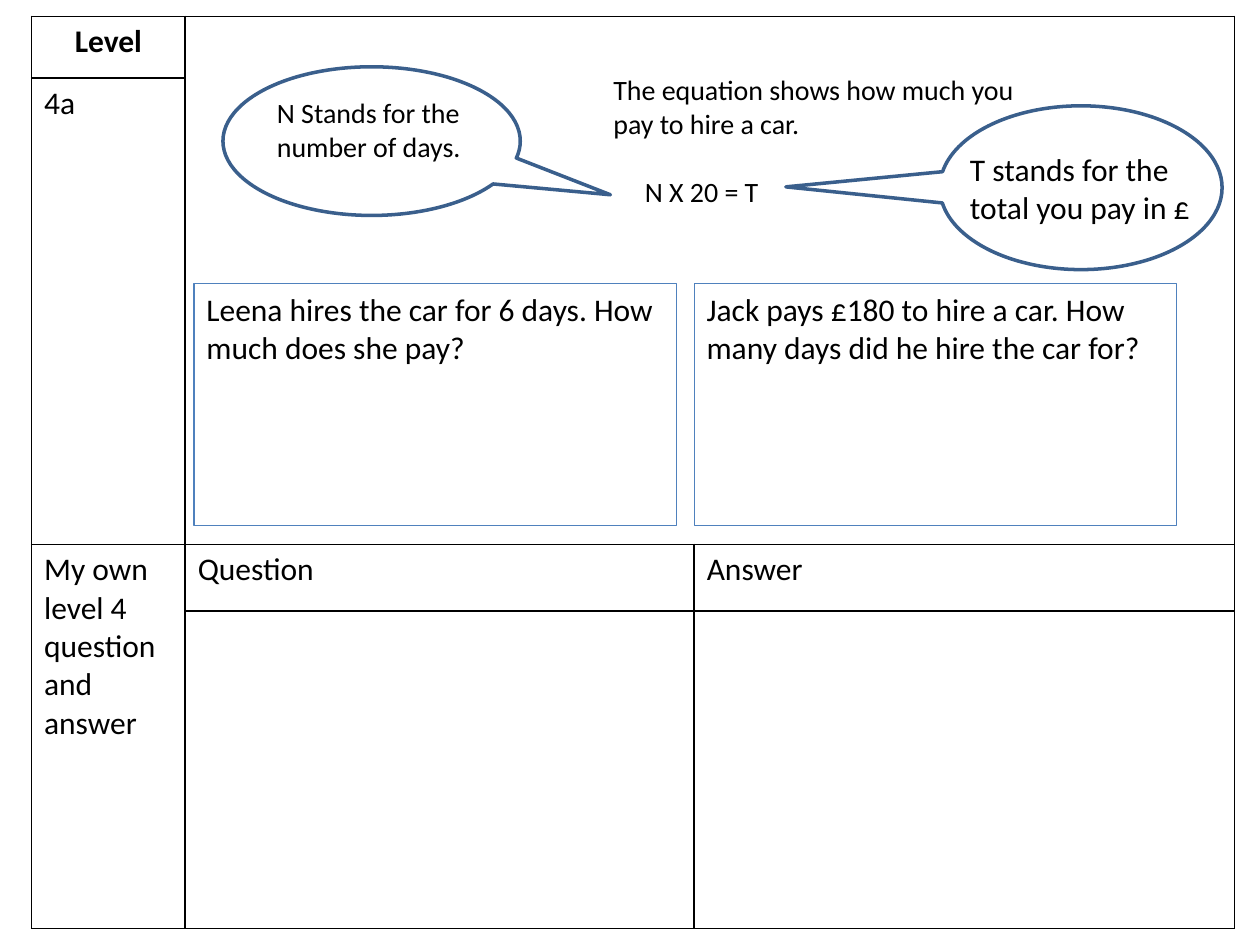
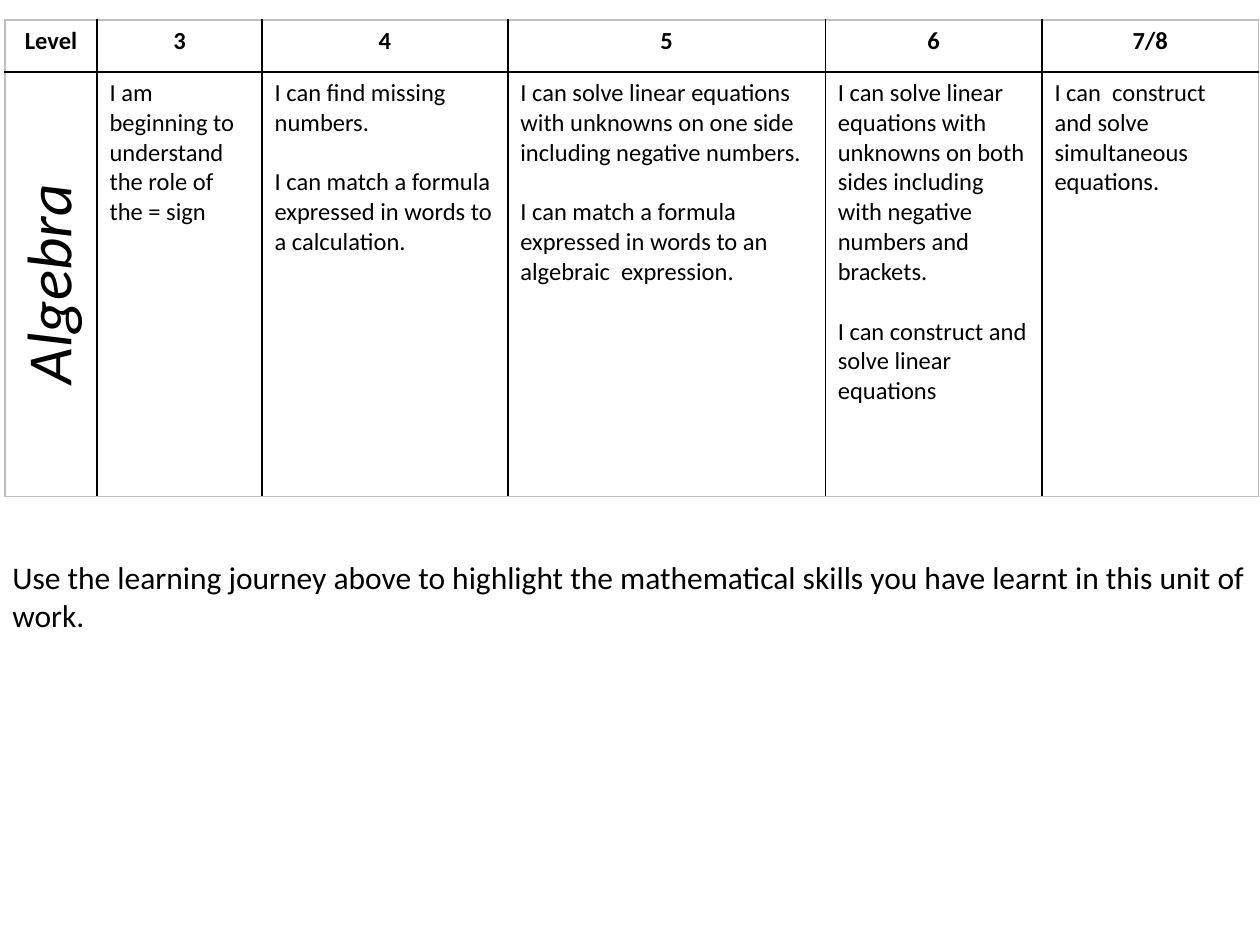
from lxml import etree
from pptx import Presentation
from pptx.dml.color import RGBColor
from pptx.enum.shapes import MSO_SHAPE
from pptx.enum.text import MSO_ANCHOR, PP_ALIGN
from pptx.oxml.ns import qn
from pptx.util import Inches, Pt

BLACK = RGBColor(0x00, 0x00, 0x00)
GREY = RGBColor(0xBF, 0xBF, 0xBF)
OUTLINE_BLUE = RGBColor(0x3A, 0x5F, 0x8C)
BOX_BLUE = RGBColor(0x4F, 0x81, 0xBD)
FONT = "Calibri"
LINE_HEIGHT = 1.22


# Shared text, shape and table helpers
def write_text(frame, paragraphs, size, bold=False, italic=False,
               align=PP_ALIGN.LEFT, gap_before=()):
    """Write paragraphs; those numbered in gap_before get one line of space above."""
    frame.word_wrap = True
    for number, text in enumerate(paragraphs):
        para = frame.paragraphs[0] if number == 0 else frame.add_paragraph()
        para.alignment = align
        if number in gap_before:
            para.space_before = Pt(round(size * LINE_HEIGHT, 1))
        span = para.add_run()
        span.text = text
        span.font.name = FONT
        span.font.size = Pt(size)
        span.font.bold = bold
        span.font.italic = italic
        span.font.color.rgb = BLACK


def add_text(page, box, paragraphs, size, gap_before=()):
    frame = page.shapes.add_textbox(*map(Inches, box)).text_frame
    write_text(frame, paragraphs, size, gap_before=gap_before)
    return frame


def add_outlined_shape(page, kind, box, color, width):
    shape = page.shapes.add_shape(kind, *map(Inches, box))
    shape.shadow.inherit = False
    shape.fill.background()
    shape.line.color.rgb = color
    shape.line.width = Pt(width)
    return shape


def set_borders(cell, colors):
    properties = cell._tc.get_or_add_tcPr()
    for side, color in zip("LRTB", colors):
        line = etree.SubElement(properties, qn(f"a:ln{side}"), w=str(Pt(1)))
        fill = etree.SubElement(line, qn("a:solidFill"))
        etree.SubElement(fill, qn("a:srgbClr"), val=str(color))


def add_grid(page, left, top, widths, heights, edge_color):
    """Add an unfilled table with black inner lines and edge_color outside."""
    rows, columns = len(heights), len(widths)
    table = page.shapes.add_table(
        rows, columns, Inches(left), Inches(top),
        Inches(sum(widths)), Inches(sum(heights))).table
    table.first_row = False
    table.horz_banding = False
    for column, width in zip(table.columns, widths):
        column.width = Inches(width)
    for row, height in zip(table.rows, heights):
        row.height = Inches(height)
    for r in range(rows):
        for c in range(columns):
            on_edge = (c == 0, c == columns - 1, r == 0, r == rows - 1)
            cell = table.cell(r, c)
            set_borders(cell, [edge_color if edge else BLACK for edge in on_edge])
            cell.fill.background()
    return table


# Slide 1: car hire question
def add_worksheet_table(page, left, top):
    table = add_grid(page, left, top, (1.22, 4.04, 4.29),
                     (0.49, 3.7, 0.53, 2.52), BLACK)
    table.cell(0, 1).merge(table.cell(1, 2))
    table.cell(2, 0).merge(table.cell(3, 0))
    write_text(table.cell(0, 0).text_frame, ["Level"], 18, bold=True,
               align=PP_ALIGN.CENTER)
    labels = {(1, 0): "4a", (2, 0): "My own level 4 question and answer",
              (2, 1): "Question", (2, 2): "Answer"}
    for (row, column), label in labels.items():
        write_text(table.cell(row, column).text_frame, [label], 18)


def add_equation(page, left, top):
    frame = add_text(page, (left, top, 4.57, 1.18),
                     ["The equation shows how much you", "pay to hire a car.",
                      "N X 20 = T"], 16, gap_before=(2,))
    frame.paragraphs[2]._p.get_or_add_pPr().set("marL", str(Inches(0.25)))


def add_callout(page, box, pointer, text, text_box, size):
    """Add a speech bubble; text_box starts relative to the bubble's corner."""
    left, top = box[:2]
    dx, dy, width, height = text_box
    add_text(page, (left + dx, top + dy, width, height), [text], size)
    bubble = add_outlined_shape(page, MSO_SHAPE.OVAL_CALLOUT, box, OUTLINE_BLUE, 2)
    for number, value in enumerate(pointer):
        bubble.adjustments[number] = value


def add_question_boxes(page, left, top):
    questions = ("Leena hires the car for 6 days. How much does she pay?",
                 "Jack pays £180 to hire a car. How many days did he hire the car for?")
    for number, question in enumerate(questions):
        box = (left + number * 3.97, top, 3.83, 1.92)
        shape = add_outlined_shape(page, MSO_SHAPE.RECTANGLE, box, BOX_BLUE, 0.75)
        shape.text_frame.vertical_anchor = MSO_ANCHOR.TOP
        write_text(shape.text_frame, [question], 18)


def build_car_hire_slide(page):
    add_worksheet_table(page, 0.25, 0.13)
    add_equation(page, 4.77, 0.53)
    add_callout(page, (1.77, 0.53, 2.36, 1.18), (0.803, 0.361),
                "N Stands for the number of days.", (0.33, 0.18, 2.04, 0.64), 16)
    add_callout(page, (7.46, 0.84, 2.24, 1.3), (-1.046, -0.005),
                "T stands for the total you pay in £", (0.14, 0.3, 1.97, 0.71), 18)
    add_question_boxes(page, 1.54, 2.25)


# Slide 2: learning journey
JOURNEY = (
    ("3", ["I am beginning to understand the role of the = sign"]),
    ("4", ["I can find missing numbers.",
           "I can match a formula expressed in words to a calculation."]),
    ("5", ["I can solve linear equations with unknowns on one side including "
           "negative numbers.",
           "I can match a formula expressed in words to an algebraic  expression."]),
    ("6", ["I can solve linear equations with unknowns on both sides including "
           "with negative numbers and brackets.",
           "I can construct and solve linear equations"]),
    ("7/8", ["I can  construct and solve simultaneous equations."]),
)


def add_journey_table(page, left, top):
    table = add_grid(page, left, top, (0.73, 1.31, 1.95, 2.52, 1.72, 1.72),
                     (0.41, 3.37), GREY)
    headings = ["Level"] + [level for level, _ in JOURNEY]
    for column, heading in enumerate(headings):
        write_text(table.cell(0, column).text_frame, [heading], 14, bold=True,
                   align=PP_ALIGN.CENTER)
    topic = table.cell(1, 0)
    topic._tc.get_or_add_tcPr().set("vert", "vert270")
    write_text(topic.text_frame, ["Algebra"], 36, italic=True,
               align=PP_ALIGN.CENTER)
    for column, (_, skills) in enumerate(JOURNEY, start=1):
        write_text(table.cell(1, column).text_frame, skills, 14, gap_before=(1,))


def build_journey_slide(page):
    add_journey_table(page, 0.04, 0.16)
    add_text(page, (0, 4.38, 10, 1.01),
             ["Use the learning journey above to highlight the mathematical "
              "skills you have learnt in this unit of work."], 18)


def main():
    deck = Presentation()
    deck.slide_width = Inches(10)
    deck.slide_height = Inches(7.5)
    for build in (build_car_hire_slide, build_journey_slide):
        build(deck.slides.add_slide(deck.slide_layouts[6]))
    deck.save("out.pptx")


if __name__ == "__main__":
    main()
